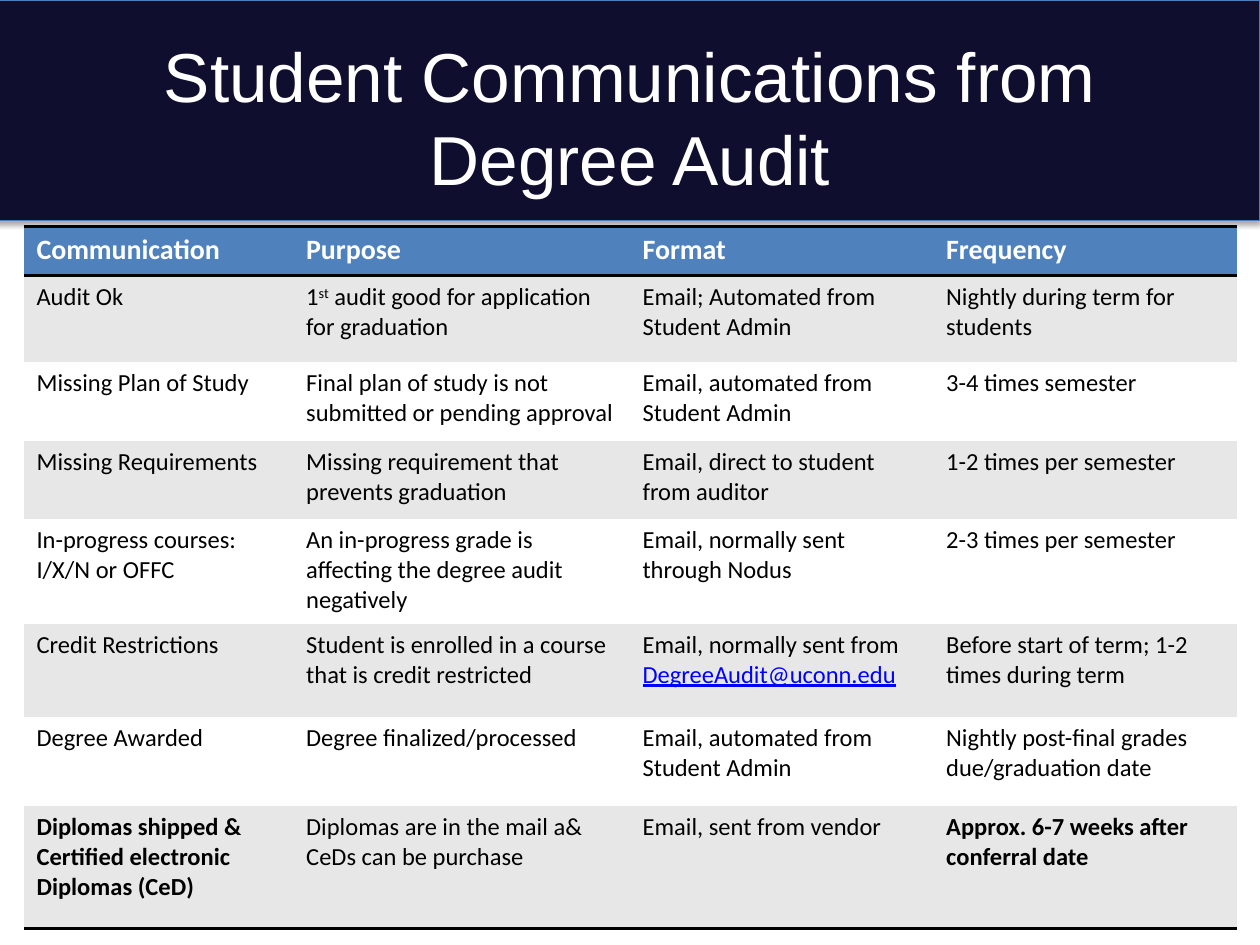
from lxml import etree
from pptx import Presentation
from pptx.dml.color import RGBColor
from pptx.enum.shapes import MSO_SHAPE
from pptx.enum.text import MSO_ANCHOR, PP_ALIGN
from pptx.oxml import parse_xml
from pptx.oxml.ns import nsdecls, qn
from pptx.util import Inches, Pt

RECTANGLE = MSO_SHAPE.RECTANGLE
MIDDLE = MSO_ANCHOR.MIDDLE
CENTER = PP_ALIGN.CENTER

COLORS = {
    "banner": "100E2F", "banner_line": "4B7EBC", "header": "4F81BD",
    "band": "E7E7E7", "white": "FFFFFF", "black": "000000", "link": "0000FF",
}
NO_STYLE = "{2D5ABB26-0587-4C30-8999-92F81FD0307C}"
TITLE = "Student Communications from Degree Audit"
EMAIL = "DegreeAudit@uconn.edu"
ORDINAL = "st"

# A cell is a string, or a tuple of runs where the formatting changes.
ROWS = [
    ("Communication", "Purpose", "Format", "Frequency"),
    ("Audit Ok", ("1", ORDINAL, " audit good for application for graduation"),
     "Email; Automated from Student Admin", "Nightly during term for students"),
    ("Missing Plan of Study", "Final plan of study is not submitted or pending approval",
     "Email, automated from Student Admin", "3-4 times semester"),
    ("Missing Requirements", "Missing requirement that prevents graduation",
     "Email, direct to student from auditor", "1-2 times per semester"),
    ("In-progress courses: I/X/N or OFFC",
     "An in-progress grade is affecting the degree audit negatively",
     "Email, normally sent through Nodus", "2-3 times per semester"),
    ("Credit Restrictions", "Student is enrolled in a course that is credit restricted",
     ("Email, normally sent from ", EMAIL), "Before start of term; 1-2 times during term"),
    ("Degree Awarded", "Degree finalized/processed",
     "Email, automated from Student Admin", "Nightly post-final grades due/graduation date"),
    ("Diplomas shipped & Certified electronic Diplomas (CeD)",
     "Diplomas are in the mail a& CeDs can be purchase",
     "Email, sent from vendor", "Approx. 6-7 weeks after conferral date"),
]
COLUMN_WIDTHS = [2.14, 2.67, 2.41, 2.41]
ROW_HEIGHTS = [0.39, 0.68, 0.63, 0.62, 0.83, 0.74, 0.71, 0.97]
LAST_ROW = len(ROWS) - 1
BOLD_CELLS = {(LAST_ROW, 0), (LAST_ROW, 3)}


def rgb(name):
    return RGBColor.from_string(COLORS[name])


def add_banner(slide):
    banner = slide.shapes.add_shape(RECTANGLE, Inches(-0.04), 0, Inches(10.04), Inches(1.75))
    banner.fill.solid()
    banner.fill.fore_color.rgb = rgb("banner")
    banner.line.color.rgb = rgb("banner_line")
    banner.line.width = Pt(0.75)
    banner.shadow.inherit = False
    effects = banner._element.spPr.find(qn("a:effectLst"))
    effects.append(parse_xml(
        f'<a:outerShdw {nsdecls("a")} blurRad="{Pt(3.1)}" dist="{Pt(1.8)}" dir="5400000" '
        f'rotWithShape="0"><a:srgbClr val="{COLORS["black"]}"><a:alpha val="35000"/>'
        '</a:srgbClr></a:outerShdw>'))


def add_title(slide):
    title = slide.shapes.add_textbox(Inches(0.5), Inches(0.3), Inches(9), Inches(1.25))
    frame = title.text_frame
    frame.word_wrap = True
    frame.vertical_anchor = MIDDLE
    frame.text = TITLE
    paragraph = frame.paragraphs[0]
    paragraph.alignment = CENTER
    font = paragraph.runs[0].font
    font.name, font.size = "Arial", Pt(39.6)
    font.color.rgb = rgb("white")


def add_rule(cell, side):
    """Draw a black 2 pt border; call for the top side before the bottom."""
    line = etree.SubElement(cell._tc.get_or_add_tcPr(), qn(f"a:{side}"), w=str(Pt(2)))
    fill = etree.SubElement(line, qn("a:solidFill"))
    etree.SubElement(fill, qn("a:srgbClr"), val=COLORS["black"])


def fill_cell(cell, content, row, column):
    is_header = row == 0
    if is_header:
        add_rule(cell, "lnT")
    if row in (0, LAST_ROW):
        add_rule(cell, "lnB")
    cell.fill.solid()
    cell.fill.fore_color.rgb = rgb("header" if is_header else "band" if row % 2 else "white")

    paragraph = cell.text_frame.paragraphs[0]
    for text in (content,) if isinstance(content, str) else content:
        run = paragraph.add_run()
        run.text = text
        font = run.font
        font.name, font.size = "Calibri", Pt(16 if is_header else 14)
        font.bold = is_header or (row, column) in BOLD_CELLS
        font.color.rgb = rgb("white" if is_header else "link" if text == EMAIL else "black")
        if text == EMAIL:
            font.underline = True
        if text == ORDINAL:
            run._r.get_or_add_rPr().set("baseline", "30000")


def add_communications_table(slide):
    frame = slide.shapes.add_table(
        len(ROWS), len(COLUMN_WIDTHS), Inches(0.19), Inches(1.8),
        Inches(sum(COLUMN_WIDTHS)), Inches(sum(ROW_HEIGHTS)))
    table = frame.table
    table._tbl.tblPr.find(qn("a:tableStyleId")).text = NO_STYLE
    for column, width in zip(table.columns, COLUMN_WIDTHS):
        column.width = Inches(width)
    for row, height in zip(table.rows, ROW_HEIGHTS):
        row.height = Inches(height)
    for r, contents in enumerate(ROWS):
        for c, content in enumerate(contents):
            fill_cell(table.cell(r, c), content, r, c)


def main():
    presentation = Presentation()
    presentation.slide_width, presentation.slide_height = Inches(10), Inches(7.5)
    slide = presentation.slides.add_slide(presentation.slide_layouts[6])
    add_banner(slide)
    add_title(slide)
    add_communications_table(slide)
    presentation.save("out.pptx")


if __name__ == "__main__":
    main()
